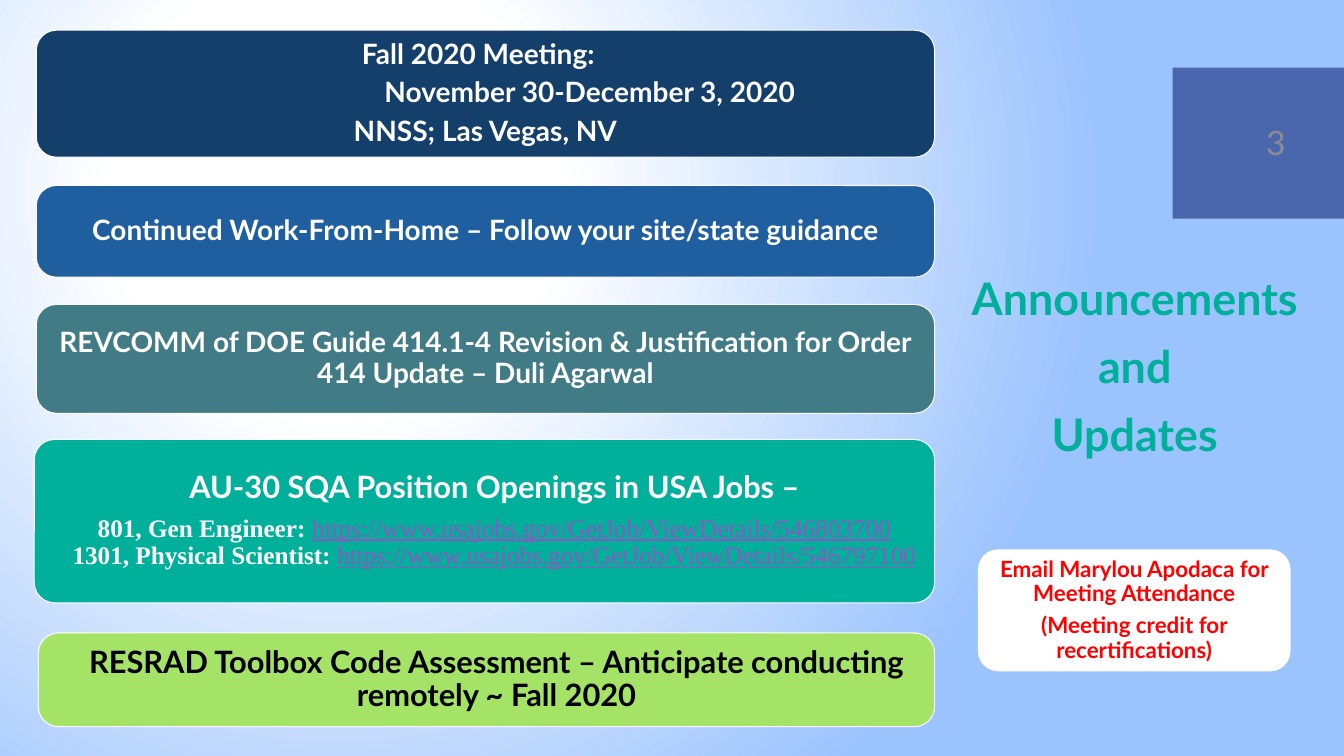
from lxml import etree
from pptx import Presentation
from pptx.dml.color import RGBColor
from pptx.enum.shapes import MSO_SHAPE
from pptx.enum.text import MSO_ANCHOR, PP_ALIGN
from pptx.oxml import parse_xml
from pptx.oxml.ns import nsdecls
from pptx.util import Inches, Pt

COLORS = {
    "white": "FFFFFF", "black": "000000", "red": "FF0000", "gray": "8C8C8C",
    "navy": "143F6A", "blue": "1F5FA0", "slate": "417B85", "teal": "00B09B",
    "lime": "A5E367", "indigo": "4A66AC", "link": "9454C3", "sky": "9BC3FE",
}

JOBS = [
    ("801, Gen Engineer: ", "https://www.usajobs.gov/GetJob/ViewDetails/546803700"),
    ("1301, Physical Scientist: ", "https://www.usajobs.gov/GetJob/ViewDetails/546797100"),
]

# Each paragraph: text, left margin, right margin
PANELS = [
    dict(box=(0.36, 0.3, 8.91, 1.26), fill="navy", size=20, color="white", after=6,
         paragraphs=[("Fall 2020 Meeting:", 0, 0.14),
                     ("November 30-December 3, 2020", 2.07, 0),
                     ("NNSS; Las Vegas, NV", 0, 0)]),
    dict(box=(0.36, 1.84, 8.91, 0.91), fill="blue", size=20, color="white", after=6,
         paragraphs=[("Continued Work-From-Home – Follow your site/state guidance", 0, 0)]),
    dict(box=(0.36, 3.02, 8.91, 1.08), fill="slate", size=20, color="white", after=6,
         paragraphs=[("REVCOMM of DOE Guide 414.1-4 Revision & Justification for Order "
                      "414 Update – Duli Agarwal", 0, 0)]),
    dict(box=(0.34, 4.36, 8.93, 1.62), fill="teal", size=22, color="white", after=7,
         paragraphs=[("AU-30 SQA Position Openings in USA Jobs –", 0.2, 0)], jobs=JOBS),
    dict(box=(0.38, 6.28, 8.89, 0.93), fill="lime", size=22, color="black", after=7,
         paragraphs=[("RESRAD Toolbox Code Assessment – Anticipate conducting "
                      "remotely ~ Fall 2020", 0.2, 0)]),
    dict(box=(9.7, 5.45, 3.1, 1.21), fill="white", size=16, color="red", after=6,
         paragraphs=[("Email Marylou Apodaca for Meeting Attendance", 0, 0),
                     ("(Meeting credit for recertifications)", 0, 0)], outlined=False),
]
TITLE = ["Announcements", "and", "Updates"]
CORNER_RADIUS = 0.2
TEXT_INSET = 0.09


def rgb(name):
    return RGBColor.from_string(COLORS[name])


def set_font(font, size, color, bold=True, name="Lato"):
    font.name, font.size, font.bold = name, Pt(size), bold
    font.color.rgb = rgb(color)


def set_background(slide):
    """Fill the slide with a circular gradient, white inside and sky blue outside."""
    background = parse_xml(
        f'<p:bg {nsdecls("p", "a")}><p:bgPr><a:gradFill rotWithShape="1"><a:gsLst>'
        f'<a:gs pos="29000"><a:srgbClr val="{COLORS["white"]}"/></a:gs>'
        f'<a:gs pos="100000"><a:srgbClr val="{COLORS["sky"]}"/></a:gs></a:gsLst>'
        '<a:path path="circle"><a:fillToRect l="50000" t="50000" r="100000" b="100000"/>'
        '</a:path></a:gradFill><a:effectLst/></p:bgPr></p:bg>')
    slide.element.cSld.insert(0, background)


def add_filled_shape(slide, kind, box, fill):
    shape = slide.shapes.add_shape(kind, *map(Inches, box))
    shape.shadow.inherit = False
    shape.fill.solid()
    shape.fill.fore_color.rgb = rgb(fill)
    shape.line.fill.background()
    return shape


def add_paragraph(frame, is_first, left=0, right=0):
    paragraph = frame.paragraphs[0] if is_first else frame.add_paragraph()
    paragraph.alignment = PP_ALIGN.CENTER
    properties = paragraph._p.get_or_add_pPr()
    properties.set("marL", str(Inches(left)))
    properties.set("marR", str(Inches(right)))
    return paragraph


def add_jobs(paragraph, jobs):
    """Write one line per job: a bold name and its underlined address."""
    set_font(paragraph.font, 18, "white", name="Times New Roman")
    for index, (job, address) in enumerate(jobs):
        if index:
            paragraph.add_line_break()
        set_font(paragraph.add_run().font, 18, "white", name="Times New Roman")
        paragraph.runs[-1].text = job
        link = paragraph.add_run()
        link.text = address
        set_font(link.font, 18, "link", bold=False, name="Times New Roman")
        link.font.underline = True


def add_panel(slide, box, fill, size, color, after, paragraphs, jobs=(), outlined=True):
    panel = add_filled_shape(slide, MSO_SHAPE.ROUNDED_RECTANGLE, box, fill)
    panel.adjustments[0] = CORNER_RADIUS / box[3]
    if outlined:
        panel.line.color.rgb = rgb("white")
        panel.line.width = Pt(0.75)
    frame = panel.text_frame
    frame.word_wrap = True
    frame.vertical_anchor = MSO_ANCHOR.MIDDLE
    frame.margin_left = frame.margin_right = Inches(TEXT_INSET)
    frame.margin_top = frame.margin_bottom = Inches(TEXT_INSET)
    for index, (text, left, right) in enumerate(paragraphs):
        paragraph = add_paragraph(frame, index == 0, left, right)
        paragraph.text = text
        set_font(paragraph.font, size, color)
    if jobs:
        add_jobs(add_paragraph(frame, False, left=0.2), jobs)
    for paragraph in frame.paragraphs:
        paragraph.line_spacing = 0.9
        paragraph.space_after = Pt(after)


def add_title(slide):
    frame = slide.shapes.add_textbox(*map(Inches, (9.47, 2.64, 3.57, 2.6))).text_frame
    frame.word_wrap = True
    for index, word in enumerate(TITLE):
        paragraph = add_paragraph(frame, index == 0)
        paragraph.text = word
        paragraph.space_before = Pt(10 if index else 0)
        set_font(paragraph.font, 32, "teal")


def add_slide_number(slide):
    add_filled_shape(slide, MSO_SHAPE.RECTANGLE, (11.63, 0.67, 1.7, 1.5), "indigo")
    frame = slide.shapes.add_textbox(*map(Inches, (12.46, 1.14, 0.66, 0.54))).text_frame
    frame.word_wrap = True
    frame.vertical_anchor = MSO_ANCHOR.MIDDLE
    frame.text = "3"
    set_font(frame.paragraphs[0].font, 24, "gray", bold=False)


def main():
    presentation = Presentation()
    presentation.slide_width, presentation.slide_height = Inches(13.33), Inches(7.5)
    slide = presentation.slides.add_slide(presentation.slide_layouts[6])
    set_background(slide)
    for panel in PANELS:
        add_panel(slide, **panel)
    add_title(slide)
    add_slide_number(slide)
    presentation.save("out.pptx")


if __name__ == "__main__":
    main()
